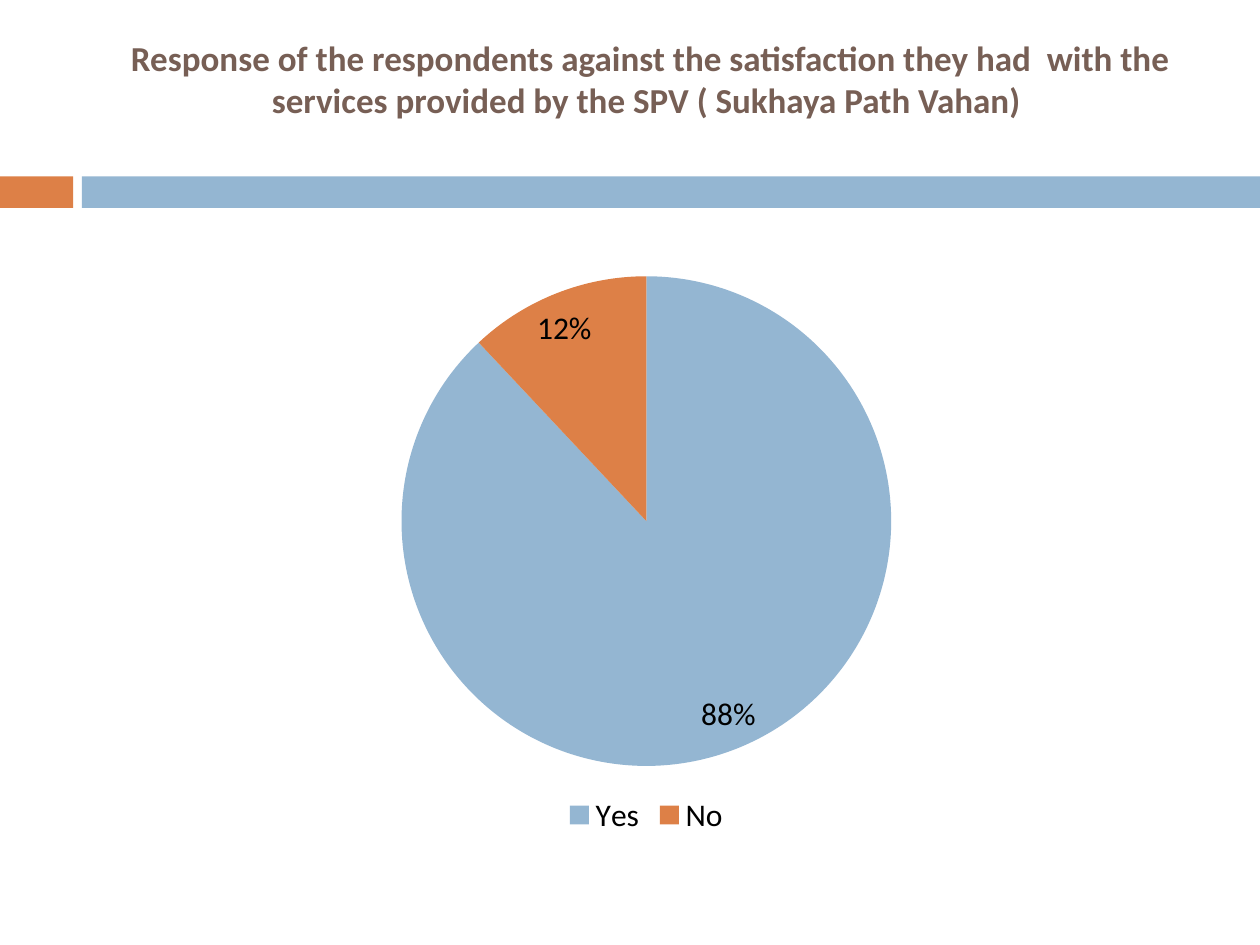
from lxml import etree
from pptx import Presentation
from pptx import util as u
from pptx.chart import data
from pptx.dml.color import RGBColor
from pptx.enum import chart as ch, shapes, text
from pptx.oxml import ns

BLUE = RGBColor(0x94, 0xB6, 0xD2)
ORANGE = RGBColor(0xDD, 0x80, 0x47)
BROWN = RGBColor(0x77, 0x5F, 0x55)
BLACK = RGBColor(0, 0, 0)


class Deck:
    face = "Calibri"

    def __init__(self):
        self.prs = Presentation()
        self.prs.slide_width = u.Inches(10)
        self.prs.slide_height = u.Inches(7.5)
        self.slide = self.prs.slides.add_slide(self.prs.slide_layouts[5])

    def style(self, font, size, color, bold=False):
        font.name = self.face
        font.size = u.Pt(size)
        font.color.rgb = color
        font.bold = bold

    def bar(self, left, width, color):
        box = self.slide.shapes.add_shape(
            shapes.MSO_SHAPE.RECTANGLE,
            u.Inches(left), u.Inches(1.4), u.Inches(width), u.Inches(0.25))
        box.shadow.inherit = False
        box.fill.solid()
        box.fill.fore_color.rgb = color
        box.line.fill.background()

    def title(self, words, left, top, width, height):
        box = self.slide.shapes.title
        box.left, box.top = u.Inches(left), u.Inches(top)
        box.width, box.height = u.Inches(width), u.Inches(height)
        frame = box.text_frame
        frame.word_wrap = True
        frame.auto_size = text.MSO_AUTO_SIZE.NONE
        frame.vertical_anchor = text.MSO_ANCHOR.MIDDLE
        para = frame.paragraphs[0]
        para.text = words
        para.alignment = text.PP_ALIGN.CENTER
        self.style(para.font, 20, BROWN, True)
        for run in para.runs:
            self.style(run.font, 20, BROWN, True)

    def pie(self, name, parts, left, top, width, height, plot):
        info = data.CategoryChartData()
        info.categories = [label for label, _, _ in parts]
        info.add_series(name, [value for _, value, _ in parts])
        chart = self.slide.shapes.add_chart(
            ch.XL_CHART_TYPE.PIE, u.Inches(left), u.Inches(top),
            u.Inches(width), u.Inches(height), info).chart
        self.style(chart.font, 10, BLACK)
        chart.has_title = False
        chart.has_legend = True
        chart.legend.position = ch.XL_LEGEND_POSITION.BOTTOM
        chart.legend.include_in_layout = False
        self.style(chart.legend.font, 18, BLACK)
        group = chart.plots[0]
        group.vary_by_categories = True
        series = group.series[0]
        for spot, (_, _, color) in enumerate(parts):
            fill = series.points[spot].format.fill
            fill.solid()
            fill.fore_color.rgb = color
        labels = series.data_labels
        labels.show_percentage = True
        labels.show_value = False
        labels.number_format = "0%"
        labels.number_format_is_linked = False
        labels.position = ch.XL_LABEL_POSITION.BEST_FIT
        self.style(labels.font, 18, BLACK)
        self.place(chart, plot)

    def place(self, chart, plot):
        area = chart._chartSpace.find(".//" + ns.qn("c:plotArea"))
        for old in area.findall(ns.qn("c:layout")):
            area.remove(old)
        layout = etree.Element(ns.qn("c:layout"))
        manual = etree.SubElement(layout, ns.qn("c:manualLayout"))
        pairs = [("layoutTarget", "inner"), ("xMode", "edge"), ("yMode", "edge")]
        for tag, value in pairs + list(zip("xywh", plot)):
            etree.SubElement(manual, ns.qn("c:" + tag)).set("val", str(value))
        area.insert(0, layout)

    def save(self):
        self.prs.save("out.pptx")


def main():
    deck = Deck()
    deck.bar(0, 0.58, ORANGE)
    deck.bar(0.65, 9.35, BLUE)
    deck.title(
        " Response of the respondents against the satisfaction they had  with the "
        "services provided by the SPV ( Sukhaya Path Vahan)\v",
        0.67, 0.25, 8.92, 1.08)
    deck.pie("Series 1", [("Yes", 88, BLUE), ("No", 12, ORANGE)],
             0.67, 1.75, 8.92, 4.92, (0.28, 0.09, 0.44, 0.79))
    deck.save()


if __name__ == "__main__":
    main()
